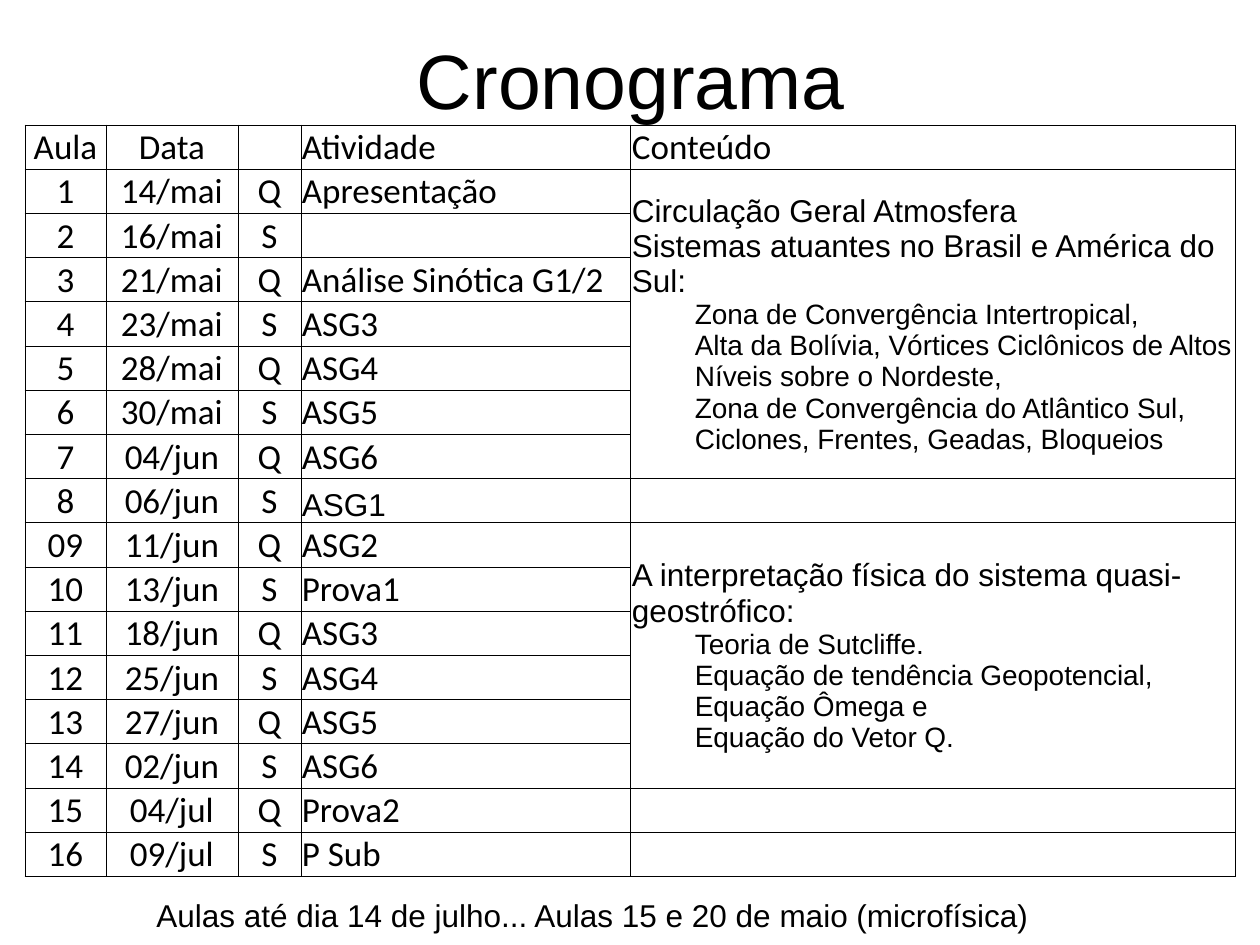
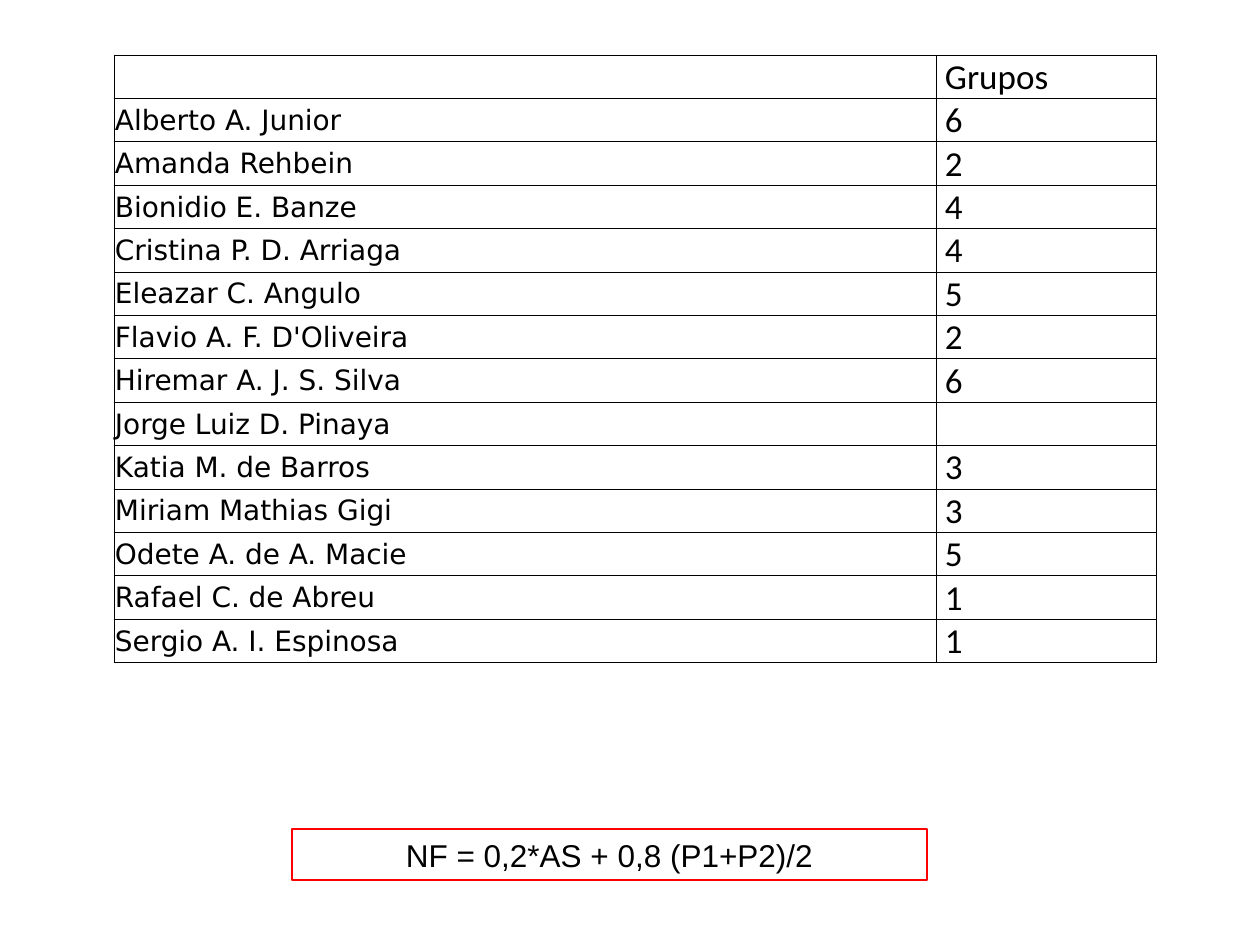
from dataclasses import dataclass
from typing import Any

from lxml.etree import SubElement
from pptx import Presentation
from pptx.dml.color import RGBColor
from pptx.enum.shapes import MSO_SHAPE
from pptx.enum.text import MSO_ANCHOR, PP_ALIGN
from pptx.oxml.ns import qn
from pptx.util import Emu, Pt

DPI = 126
BLACK = "000000"
RED = "FF0000"
SANS = "Arial"
HUMAN = "Calibri"
WIDE = "DejaVu Sans"
LEFT, MID = PP_ALIGN.LEFT, PP_ALIGN.CENTER


@dataclass(frozen=True)
class Box:
    left: int
    top: int
    width: int
    height: int


@dataclass(frozen=True)
class Line:
    text: str
    font: str = SANS
    size: int = 18
    align: Any = LEFT
    level: int = 0


@dataclass(frozen=True)
class Cell:
    lines: tuple[Line, ...] = ()
    anchor: Any = MSO_ANCHOR.BOTTOM
    inset: int = 1
    span: int = 1


@dataclass(frozen=True)
class Grid:
    box: Box
    cols: tuple[int, ...]
    rows: list[list[Cell]]


def px(count: int) -> Emu:
    return Emu(round(count * 914400 / DPI))


def place(box: Box) -> tuple[Emu, Emu, Emu, Emu]:
    return px(box.left), px(box.top), px(box.width), px(box.height)


def tint(code: str) -> RGBColor:
    return RGBColor.from_string(code)


def write(frame: Any, lines: tuple[Line, ...]) -> None:
    frame.word_wrap = True
    for at, line in enumerate(lines):
        par = frame.add_paragraph() if at else frame.paragraphs[0]
        par.alignment = line.align
        if line.level:
            par.level = line.level
            props = par._p.get_or_add_pPr()
            props.set("marL", str(px(63 * line.level)))
            props.set("indent", "0")
        run = par.add_run()
        run.text = line.text
        run.font.name = line.font
        run.font.size = Pt(line.size)
        run.font.color.rgb = tint(BLACK)


def frame_cell(cell: Any) -> None:
    props = cell._tc.get_or_add_tcPr()
    for side in ("lnL", "lnR", "lnT", "lnB"):
        edge = SubElement(props, qn(f"a:{side}"), w=str(Pt(0.5)))
        fill = SubElement(edge, qn("a:solidFill"))
        SubElement(fill, qn("a:srgbClr"), val=BLACK)
    cell.fill.background()


def draw_grid(slide: Any, grid: Grid) -> None:
    count = len(grid.rows)
    table = slide.shapes.add_table(count, len(grid.cols), *place(grid.box)).table
    table.first_row = False
    table.horz_banding = False
    for col, width in zip(table.columns, grid.cols):
        col.width = px(width)
    for y, row in enumerate(grid.rows):
        table.rows[y].height = Emu(px(grid.box.height) // count)
        for x, item in enumerate(row):
            cell = table.cell(y, x)
            frame_cell(cell)
            cell.margin_left = px(item.inset)
            cell.margin_right = cell.margin_top = px(1)
            cell.margin_bottom = 0
            cell.vertical_anchor = item.anchor
            write(cell.text_frame, item.lines)
            if item.span > 1:
                cell.merge(table.cell(y + item.span - 1, x))


def plain(text: str, align: Any = LEFT, font: str = HUMAN, size: int = 20) -> Cell:
    return Cell((Line(text, font, size, align),)) if text else Cell()


def topic(span: int, heads: list[str], points: list[str]) -> Cell:
    lines = [Line(head) for head in heads]
    lines += [Line(point, size=16, level=1) for point in points]
    return Cell(tuple(lines), MSO_ANCHOR.MIDDLE, span=span)


DATES = (
    "14/mai 16/mai 21/mai 23/mai 28/mai 30/mai 04/jun 06/jun "
    "11/jun 13/jun 18/jun 25/jun 27/jun 02/jun 04/jul 09/jul"
).split()
TASKS = [
    "Apresentação", "", "Análise Sinótica G1/2", "ASG3", "ASG4", "ASG5", "ASG6", "ASG1",
    "ASG2", "Prova1", "ASG3", "ASG4", "ASG5", "ASG6", "Prova2", "P Sub",
]
TOPICS = {
    1: topic(
        7,
        ["Circulação Geral Atmosfera", "Sistemas atuantes no Brasil e América do Sul:"],
        [
            "Zona de Convergência Intertropical,",
            "Alta da Bolívia, Vórtices Ciclônicos de Altos Níveis sobre o Nordeste,",
            "Zona de Convergência do Atlântico Sul, Ciclones, Frentes, Geadas, Bloqueios",
        ],
    ),
    9: topic(
        6,
        ["A interpretação física do sistema quasi-geostrófico:"],
        [
            "Teoria de Sutcliffe.",
            "Equação de tendência Geopotencial,",
            "Equação Ômega e",
            "Equação do Vetor Q.",
        ],
    ),
}
GROUPS = {
    "Alberto A. Junior": "6",
    "Amanda Rehbein": "2",
    "Bionidio E. Banze": "4",
    "Cristina P. D. Arriaga": "4",
    "Eleazar C. Angulo": "5",
    "Flavio A. F. D'Oliveira": "2",
    "Hiremar A. J. S. Silva": "6",
    "Jorge Luiz D. Pinaya": "",
    "Katia M. de Barros": "3",
    "Miriam Mathias Gigi": "3",
    "Odete A. de A. Macie": "5",
    "Rafael C. de Abreu": "1",
    "Sergio A. I. Espinosa": "1",
}


def class_rows() -> list[list[Cell]]:
    rows = [[plain("Aula", MID), plain("Data", MID), Cell(), plain("Atividade"), plain("Conteúdo")]]
    for num, (date, task) in enumerate(zip(DATES, TASKS), 1):
        label = "09" if num == 9 else str(num)
        day = "Q" if num % 2 else "S"
        work = plain(task, font=SANS, size=18) if num == 8 else plain(task)
        rows.append(
            [plain(label, MID), plain(date, MID), plain(day, MID), work, TOPICS.get(num, Cell())]
        )
    return rows


def group_rows() -> list[list[Cell]]:
    rows = []
    for name, group in [("", "Grupos"), *GROUPS.items()]:
        lines = (Line(name, WIDE, 16),) if name else ()
        mark = (Line(group, HUMAN, 20),) if group else ()
        rows.append([Cell(lines, MSO_ANCHOR.MIDDLE), Cell(mark, inset=9)])
    return rows


def draw_plan(deck: Any) -> None:
    slide = deck.slides.add_slide(deck.slide_layouts[5])
    title = slide.shapes.title
    title.left, title.top, title.width, title.height = place(Box(64, 0, 1134, 158))
    title.text_frame.vertical_anchor = MSO_ANCHOR.MIDDLE
    write(title.text_frame, (Line("Cronograma", size=44, align=MID),))
    draw_grid(slide, Grid(Box(25, 125, 1211, 752), (81, 132, 63, 330, 605), class_rows()))
    note = slide.shapes.add_textbox(*place(Box(144, 890, 903, 50)))
    write(note.text_frame, (Line("Aulas até dia 14 de julho... Aulas 15 e 20 de maio (microfísica)"),))


def draw_groups(deck: Any) -> None:
    slide = deck.slides.add_slide(deck.slide_layouts[6])
    grade = slide.shapes.add_shape(MSO_SHAPE.RECTANGLE, *place(Box(292, 829, 635, 51)))
    grade.shadow.inherit = False
    grade.fill.background()
    grade.line.color.rgb = tint(RED)
    grade.line.width = Pt(0.75)
    write(grade.text_frame, (Line("NF = 0,2*AS + 0,8 (P1+P2)/2", align=MID),))
    draw_grid(slide, Grid(Box(114, 55, 1042, 608), (822, 220), group_rows()))


def main() -> None:
    deck = Presentation()
    deck.slide_width, deck.slide_height = px(1260), px(945)
    draw_plan(deck)
    draw_groups(deck)
    deck.save("out.pptx")


if __name__ == "__main__":
    main()
